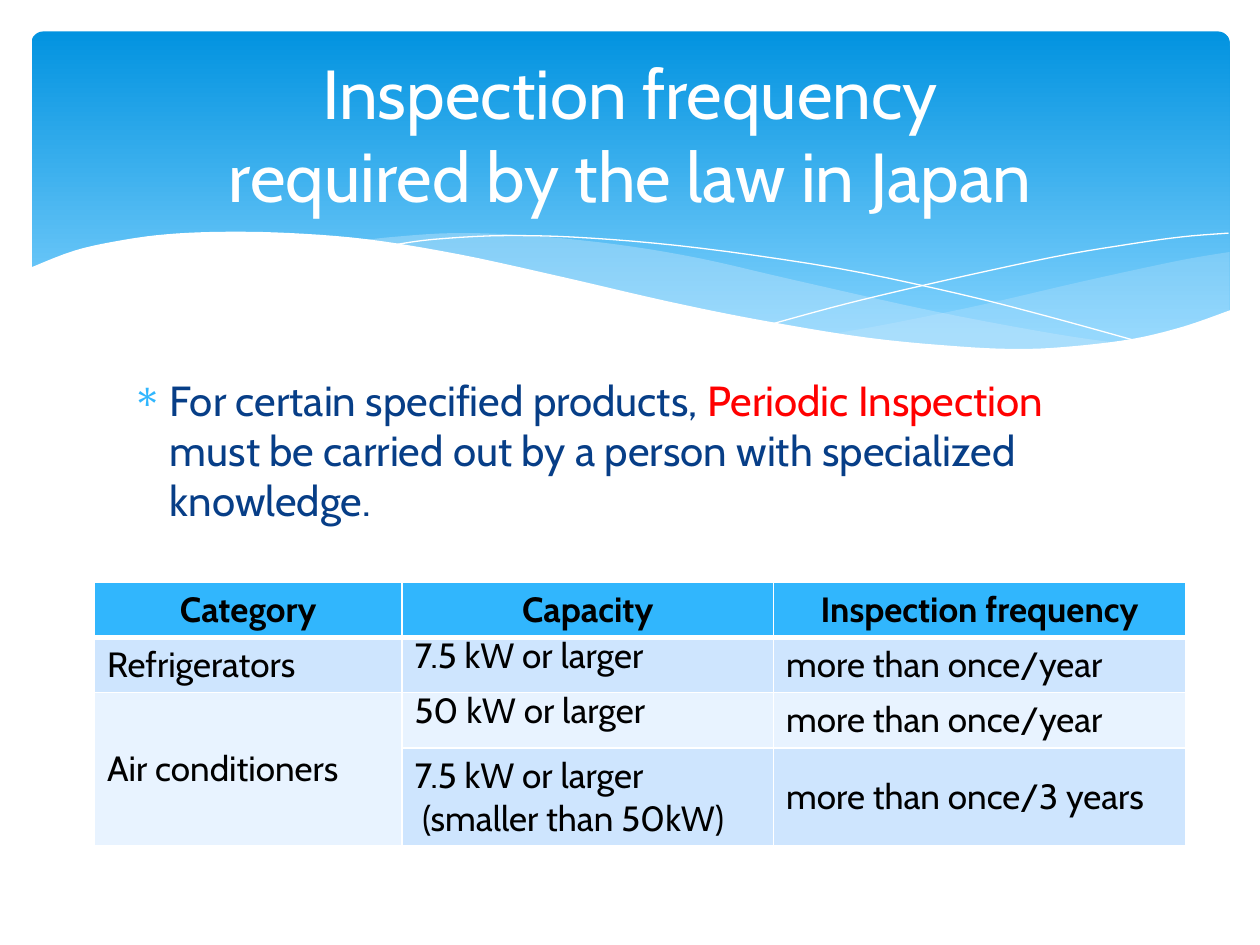
from lxml.etree import SubElement
from pptx import Presentation
from pptx.dml.color import RGBColor
from pptx.enum.shapes import MSO_SHAPE
from pptx.enum.text import MSO_ANCHOR, PP_ALIGN
from pptx.oxml import parse_xml
from pptx.oxml.ns import nsdecls, qn
from pptx.util import Inches, Pt

COLORS = {
    "white": "FFFFFF", "black": "000000", "red": "FF0000", "navy": "073E87",
    "sky": "31B6FD", "band_top": "0293E0", "band_bottom": "83D3FE",
    "mist": "C6E7FC", "row_dark": "CEE5FE", "row_light": "E8F3FF",
}

RIGHT_WAVE_TOP = [(9.76, 2), (9.35, 2.07), (8.61, 2.23), (7.79, 2.42), (7.06, 2.57), (6.61, 2.65)]
RIGHT_WAVE_BASE = [(6.61, 2.65), (7.19, 2.72), (7.69, 2.77), (8.14, 2.78), (8.63, 2.75),
                   (9.05, 2.69), (9.42, 2.59), (9.76, 2.47)]
MIDDLE_WAVE_TOP = [(8.93, 2.73), (8.37, 2.65), (7.41, 2.47), (6.29, 2.22), (5.55, 2.05),
                   (4.89, 1.94), (4.2, 1.87), (3.61, 1.85), (3.13, 1.88), (2.86, 1.91)]
MIDDLE_WAVE_BASE = [(2.86, 1.91), (3.62, 2.03), (4.49, 2.22), (5.3, 2.4), (6.01, 2.55),
                    (6.65, 2.66), (7.22, 2.74), (7.73, 2.77), (8.18, 2.78), (8.57, 2.77),
                    (8.93, 2.73)]
FALLING_LINE = [(3.09, 1.95), (3.44, 1.9), (4.01, 1.87), (4.69, 1.89), (5.56, 1.97),
                (6.65, 2.13), (7.6, 2.33), (8.31, 2.51), (9.07, 2.72)]
RISING_LINE = [(6.13, 2.57), (6.72, 2.41), (7.48, 2.23), (8.36, 2.04), (8.95, 1.94),
               (9.38, 1.88), (9.75, 1.85)]
WHITE_WAVE = [(9.77, 2.46), (9.4, 2.59), (8.99, 2.69), (8.5, 2.75), (8.09, 2.77), (7.61, 2.75),
              (6.88, 2.68), (6.03, 2.54), (5.29, 2.39), (4.47, 2.2), (3.65, 2.02), (2.92, 1.9),
              (2.3, 1.85), (1.77, 1.84), (1.32, 1.86), (0.95, 1.91), (0.59, 1.99), (0.23, 2.13)]
WHITE_BASE = [(0.23, 3.29), (9.77, 3.29)]


def smooth_curve(points, steps=5):
    padded = [points[0], *points, points[-1]]
    curve = []
    for a, b, c, d in zip(padded, padded[1:], padded[2:], padded[3:]):
        for i in range(steps):
            t = i / steps
            curve.append(tuple(
                0.5 * (2 * q + (r - p) * t + (2 * p - 5 * q + 4 * r - s) * t ** 2
                       + (3 * q - p - 3 * r + s) * t ** 3)
                for p, q, r, s in zip(a, b, c, d)))
    return curve + [points[-1]]


class SlideBuilder:
    font = "Cabin"

    def __init__(self, prs):
        self.s = prs.slides.add_slide(prs.slide_layouts[6])

    def rgb(self, name):
        return RGBColor.from_string(COLORS[name])

    def run(self, p, text, size, color, bold=False):
        r = p.add_run()
        r.text = text
        r.font.name = self.font
        r.font.size = Pt(size)
        r.font.bold = bold
        r.font.color.rgb = self.rgb(color)

    def band(self, x, y, w, h, top, bottom):
        sp = self.s.shapes.add_shape(MSO_SHAPE.ROUNDED_RECTANGLE,
                                     Inches(x), Inches(y), Inches(w), Inches(h))
        sp.adjustments[0] = 0.034
        sp.shadow.inherit = False
        sp.line.fill.background()
        sp.fill.gradient()
        sp.fill.gradient_angle = 270
        for stop, color, position in zip(sp.fill.gradient_stops, (top, bottom), (0, 0.9)):
            stop.color.rgb = self.rgb(color)
            stop.position = position

    def outline(self, points, close):
        (x, y), *rest = [(Inches(px), Inches(py)) for px, py in points]
        builder = self.s.shapes.build_freeform(x, y)
        builder.add_line_segments(rest, close=close)
        sp = builder.convert_to_shape()
        sp.shadow.inherit = False
        return sp

    def wave(self, points, color, opacity=100):
        sp = self.outline(points, True)
        sp.line.fill.background()
        sp.fill.solid()
        sp.fill.fore_color.rgb = self.rgb(color)
        if opacity < 100:
            clr = sp.element.spPr.find(qn("a:solidFill")).find(qn("a:srgbClr"))
            SubElement(clr, qn("a:alpha")).set("val", str(opacity * 1000))

    def curve(self, points, color):
        sp = self.outline(smooth_curve(points), False)
        sp.fill.background()
        sp.line.color.rgb = self.rgb(color)
        sp.line.width = Pt(0)

    def text_box(self, x, y, w, h, anchor):
        tf = self.s.shapes.add_textbox(Inches(x), Inches(y), Inches(w), Inches(h)).text_frame
        tf.word_wrap = True
        tf.vertical_anchor = anchor
        return tf.paragraphs[0]

    def title(self, x, y, w, h, lines):
        p = self.text_box(x, y, w, h, MSO_ANCHOR.MIDDLE)
        p.alignment = PP_ALIGN.CENTER
        for i, line in enumerate(lines):
            if i:
                p.add_line_break()
            self.run(p, line, 39.6, "white")

    def bullet(self, x, y, w, h, runs):
        p = self.text_box(x, y, w, h, MSO_ANCHOR.TOP)
        p.space_before = Pt(5)
        pPr = p._p.get_or_add_pPr()
        pPr.set("marL", str(Inches(0.3)))
        pPr.set("indent", str(Inches(-0.3)))
        clr = SubElement(pPr, qn("a:buClr"))
        SubElement(clr, qn("a:srgbClr")).set("val", COLORS["sky"])
        SubElement(pPr, qn("a:buChar")).set("char", "∗")
        for text, color in runs:
            self.run(p, text, 24, color)

    def borders(self, cell, widths):
        tcPr = cell._tc.get_or_add_tcPr()
        for i, (side, width) in enumerate(zip("LRTB", widths)):
            tcPr.insert(i, parse_xml(
                f'<a:ln{side} {nsdecls("a")} w="{Pt(width)}"><a:solidFill>'
                f'<a:srgbClr val="{COLORS["white"]}"/></a:solidFill></a:ln{side}>'))

    def cell(self, cell, text, fill, header, tight):
        cell.fill.solid()
        cell.fill.fore_color.rgb = self.rgb(fill)
        cell.vertical_anchor = MSO_ANCHOR.MIDDLE
        tf = cell.text_frame
        for i, line in enumerate(text.split("\n") if text else []):
            p = tf.add_paragraph() if i else tf.paragraphs[0]
            if header:
                p.alignment = PP_ALIGN.CENTER
            if tight:
                p.line_spacing = Pt(14)
            self.run(p, line, 20, "black", header)

    def table(self, x, y, cols, heights, rows, fills, merges, tight):
        tbl = self.s.shapes.add_table(len(rows), len(cols), Inches(x), Inches(y),
                                      Inches(sum(cols)), Inches(sum(heights))).table
        tbl.first_row = tbl.horz_banding = False
        for column, width in zip(tbl.columns, cols):
            column.width = Inches(width)
        for row, height in zip(tbl.rows, heights):
            row.height = Inches(height)
        for first, last in merges:
            tbl.cell(*first).merge(tbl.cell(*last))
        for i, texts in enumerate(rows):
            for j, text in enumerate(texts):
                cell = tbl.cell(i, j)
                fill = fills[i - 1] if cell.is_spanned else fills[i]
                self.cell(cell, text, fill, i == 0, (i, j) in tight)
                self.borders(cell, (1, 1, 3 if i == 1 else 1, 3 if i == 0 else 1))


def main():
    prs = Presentation()
    prs.slide_width, prs.slide_height = Inches(10), Inches(7.5)
    b = SlideBuilder(prs)
    b.band(0.25, 0.25, 9.51, 2.7, "band_top", "band_bottom")
    b.wave(smooth_curve(RIGHT_WAVE_TOP) + smooth_curve(RIGHT_WAVE_BASE), "mist", 29)
    b.wave(smooth_curve(MIDDLE_WAVE_TOP) + smooth_curve(MIDDLE_WAVE_BASE), "mist", 40)
    b.curve(FALLING_LINE, "white")
    b.curve(RISING_LINE, "white")
    b.wave(smooth_curve(WHITE_WAVE) + WHITE_BASE, "white")
    b.table(0.75, 4.62, [2.44, 2.95, 3.27], [0.43, 0.43, 0.44, 0.77], [
        ["Category", "Capacity", "Inspection frequency"],
        ["Refrigerators", "7.5 kW or larger", "more than once/year"],
        ["Air conditioners", "50 kW or larger", "more than once/year"],
        ["", "7.5 kW or larger\n (smaller than 50kW)", "more than once/3 years"],
    ], ["sky", "row_dark", "row_light", "row_dark"], [((2, 0), (3, 0))], {(1, 1), (2, 1)})
    b.title(0.5, 0.37, 9, 1.37, ["Inspection frequency", "required by the law in Japan"])
    b.bullet(0.95, 2.92, 8.06, 1.46, [
        ("For certain specified products, ", "navy"),
        ("Periodic Inspection ", "red"),
        ("must be carried out by a person with specialized knowledge.", "navy"),
    ])
    prs.save("out.pptx")


if __name__ == "__main__":
    main()
